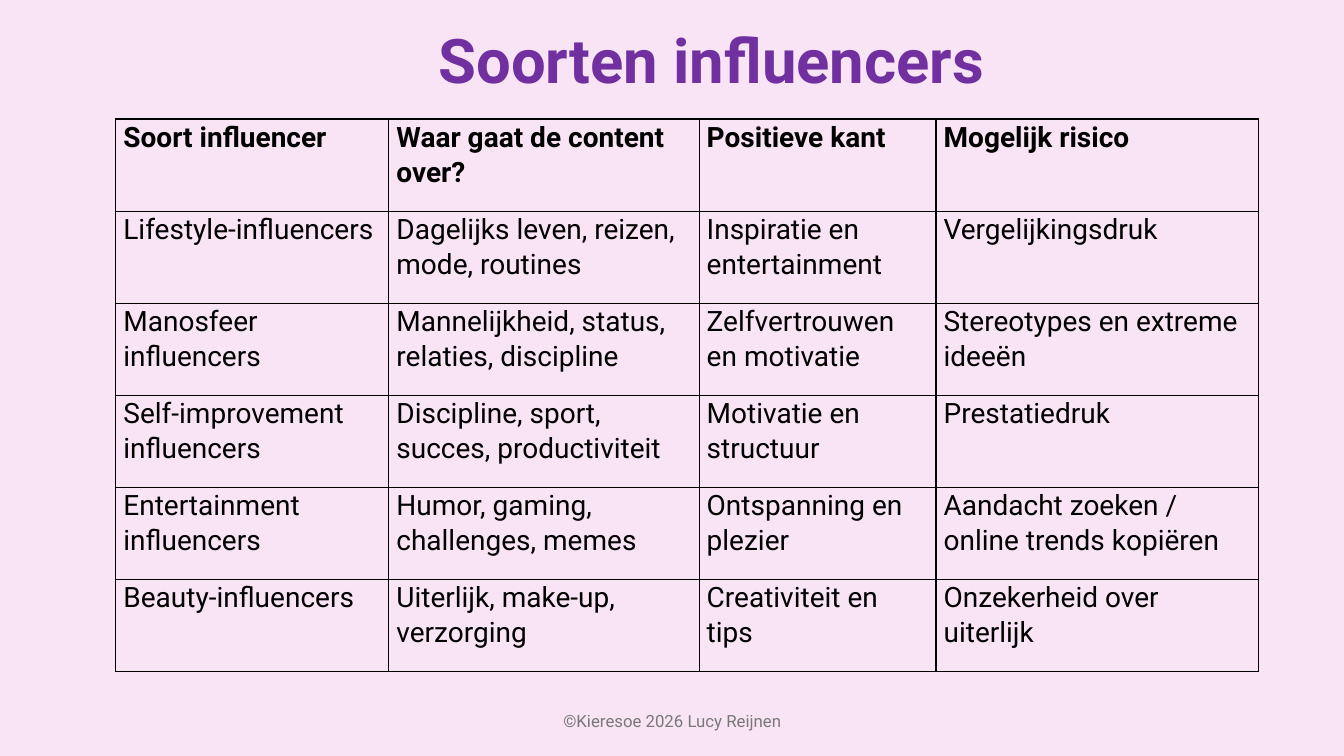
"""Builds the slide 'Soorten influencers' with a table of influencer types."""
from lxml import etree
from pptx import Presentation
from pptx.dml.color import RGBColor
from pptx.enum.text import MSO_ANCHOR, PP_ALIGN
from pptx.oxml import parse_xml
from pptx.oxml.ns import nsdecls
from pptx.util import Cm, Pt


def rgb(value):
    return RGBColor.from_string(value)


def style(p, size, color, bold=False):
    for r in p.runs:
        r.font.name = "Roboto"
        r.font.size = Pt(size)
        r.font.bold = bold
        r.font.color.rgb = rgb(color)


rows = [
    ["Soort influencer", "Waar gaat de content over?", "Positieve kant", "Mogelijk risico"],
    ["Lifestyle-influencers", "Dagelijks leven, reizen, mode, routines",
     "Inspiratie en entertainment", "Vergelijkingsdruk"],
    ["Manosfeer influencers", "Mannelijkheid, status, relaties, discipline",
     "Zelfvertrouwen en motivatie", "Stereotypes en extreme ideeën"],
    ["Self-improvement influencers", "Discipline, sport, succes, productiviteit",
     "Motivatie en structuur", "Prestatiedruk"],
    ["Entertainment influencers", "Humor, gaming, challenges, memes",
     "Ontspanning en plezier", "Aandacht zoeken / online trends kopiëren"],
    ["Beauty-influencers", "Uiterlijk, make-up, verzorging",
     "Creativiteit en tips", "Onzekerheid over uiterlijk"],
]
col_widths = [6.88, 7.82, 5.97, 8.13]
row_height = 2.32

prs = Presentation()
prs.slide_width, prs.slide_height = Cm(33.87), Cm(19.05)
s = prs.slides.add_slide(prs.slide_layouts[6])
s.background.fill.solid()
s.background.fill.fore_color.rgb = rgb("F8E4F5")

texts = [
    ("©Kieresoe 2026 Lucy Reijnen", (11.23, 17.65, 11.43, 1.02), MSO_ANCHOR.MIDDLE,
     1.0, 12, "797979", False),
    ("Soorten influencers", (3.33, 0, 29.21, 2.57), MSO_ANCHOR.BOTTOM,
     0.9, 44, "7030A0", True),
]
for text, box, anchor, spacing, size, color, bold in texts:
    tf = s.shapes.add_textbox(*[Cm(v) for v in box]).text_frame
    tf.word_wrap = True
    tf.vertical_anchor = anchor
    p = tf.paragraphs[0]
    p.text = text
    p.alignment = PP_ALIGN.CENTER
    p.line_spacing = spacing
    style(p, size, color, bold)

table = s.shapes.add_table(len(rows), len(col_widths), Cm(2.92), Cm(3),
                           Cm(sum(col_widths)), Cm(row_height * len(rows))).table
table.horz_banding = False
for column, width in zip(table.columns, col_widths):
    column.width = Cm(width)
for i, row in enumerate(rows):
    table.rows[i].height = Cm(row_height)
    for j, text in enumerate(row):
        cell = table.cell(i, j)
        cell.margin_left = cell.margin_right = Cm(0.19)
        cell.margin_top = cell.margin_bottom = 0
        cell.fill.background()
        p = cell.text_frame.paragraphs[0]
        p.text = text
        p.line_spacing = 1.07
        p.space_after = Pt(8)
        style(p, 20, "000000", i == 0)
        tcPr = cell._tc.get_or_add_tcPr()
        for k, side in enumerate(["lnL", "lnR", "lnT", "lnB"]):
            tcPr.insert(k, parse_xml(
                f'<a:{side} {nsdecls("a")} w="{Pt(1)}"><a:solidFill>'
                f'<a:srgbClr val="000000"/></a:solidFill></a:{side}>'))

prs.save("out.pptx")
